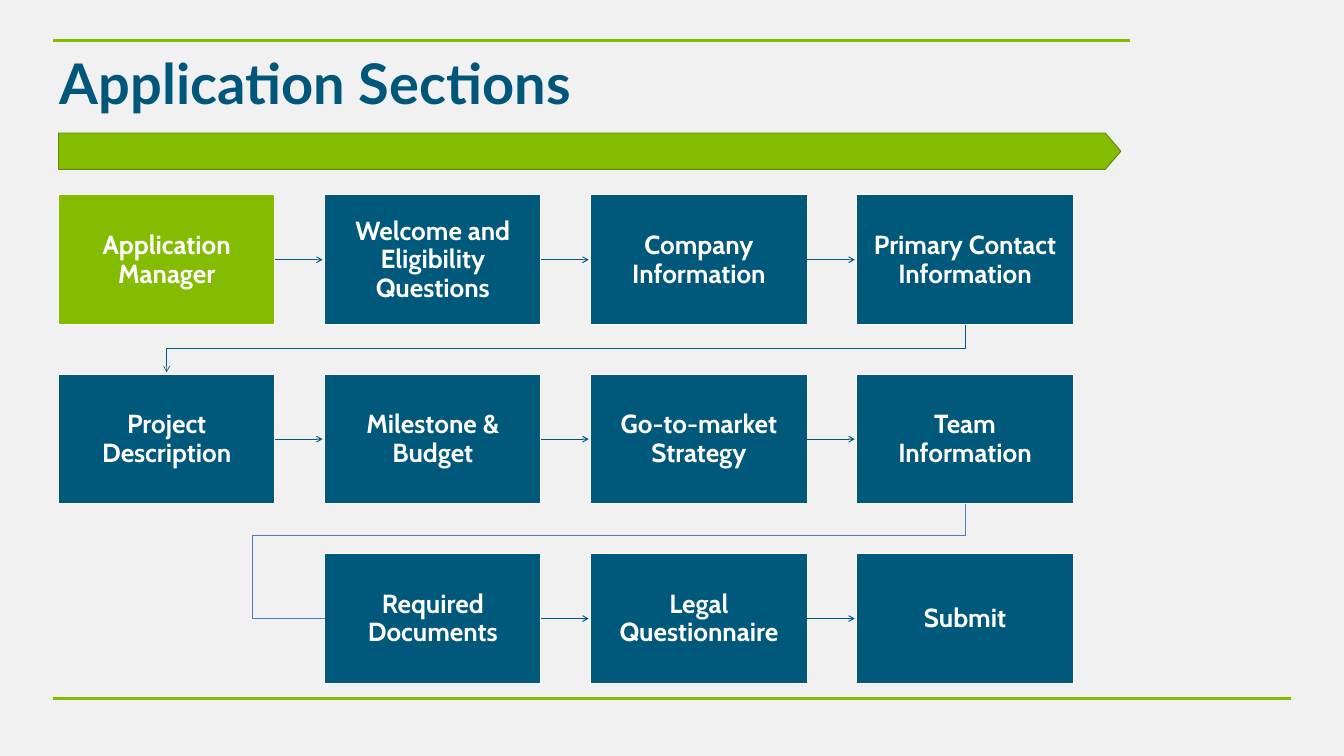
from dataclasses import dataclass

from lxml import etree
from pptx import Presentation
from pptx.dml.color import RGBColor
from pptx.enum.shapes import MSO_CONNECTOR, MSO_SHAPE
from pptx.enum.text import MSO_ANCHOR, PP_ALIGN
from pptx.oxml.ns import qn
from pptx.util import Inches, Pt

STRAIGHT, ELBOW = MSO_CONNECTOR.STRAIGHT, MSO_CONNECTOR.ELBOW
RECT, PENTAGON = MSO_SHAPE.RECTANGLE, MSO_SHAPE.PENTAGON
MIDDLE, TOP = MSO_ANCHOR.MIDDLE, MSO_ANCHOR.TOP
CENTER, LEFT = PP_ALIGN.CENTER, PP_ALIGN.LEFT

Point = tuple[float, float]


@dataclass(frozen=True)
class Theme:
    paper: str = "F1F1F1"
    white: str = "FFFFFF"
    green: str = "83BC00"
    rule: str = "84BC00"
    dark_green: str = "5F8900"
    navy: str = "00587B"
    title: str = "00577A"
    link: str = "4B7EBC"
    title_font: str = "Lato"
    step_font: str = "Cabin"
    title_size: float = 60
    step_size: float = 28
    step_leading: float = 30.7


@dataclass(frozen=True)
class Grid:
    left: float = 0.87
    top: float = 2.9
    col_pitch: float = 3.96
    row_pitch: float = 2.67
    width: float = 3.22
    height: float = 1.93

    def x(self, col: float) -> float:
        return self.left + col * self.col_pitch

    def y(self, row: float) -> float:
        return self.top + row * self.row_pitch

    def mid_x(self, col: int) -> float:
        return self.x(col) + self.width / 2

    def mid_y(self, row: int) -> float:
        return self.y(row) + self.height / 2


@dataclass(frozen=True)
class Step:
    text: str
    col: int
    row: int
    fill: str


THEME, GRID = Theme(), Grid()
SLIDE_W, SLIDE_H = 20, 11.25
ARROW_GAP = 0.03
ROWS = [
    (0, ["Application Manager", "Welcome and Eligibility Questions",
         "Company Information", "Primary Contact Information"]),
    (0, ["Project Description", "Milestone & Budget",
         "Go-to-market Strategy", "Team Information"]),
    (1, ["Required Documents", "Legal Questionnaire", "Submit"]),
]
STEPS = [
    Step(text, first + i, row, THEME.navy if row or i else THEME.green)
    for row, (first, texts) in enumerate(ROWS)
    for i, text in enumerate(texts)
]


def rgb(color: str) -> RGBColor:
    return RGBColor.from_string(color)


def add_box(slide, kind, box, fill: str, line: str):
    sp = slide.shapes.add_shape(kind, *map(Inches, box))
    sp.shadow.inherit = False
    sp.fill.solid()
    sp.fill.fore_color.rgb = rgb(fill)
    sp.line.color.rgb = rgb(line)
    sp.line.width = Pt(1)
    return sp


def add_line(slide, start: Point, end: Point, color: str, width: float,
             kind=STRAIGHT, arrow: bool = False):
    cxn = slide.shapes.add_connector(kind, *map(Inches, (*start, *end)))
    cxn.line.color.rgb = rgb(color)
    cxn.line.width = Pt(width)
    sp_pr = cxn._element.spPr
    if arrow:
        etree.SubElement(sp_pr.find(qn("a:ln")), qn("a:tailEnd"), type="arrow")
    etree.SubElement(sp_pr, qn("a:effectLst"))
    return cxn


def add_bend(slide, start: Point, end: Point, color: str, preset: str,
             arrow: bool = False) -> None:
    """Draw an elbow that leaves its start downwards: a quarter-turned connector."""
    (x1, y1), (x2, y2) = start, end
    cx, cy = (x1 + x2) / 2, (y1 + y2) / 2
    half_w, half_h = (y2 - y1) / 2, (x2 - x1) / 2
    cxn = add_line(slide, (cx - half_w, cy + half_h), (cx + half_w, cy - half_h),
                   color, 0.75, ELBOW, arrow)
    sp_pr = cxn._element.spPr
    sp_pr.find(qn("a:xfrm")).set("rot", "5400000")
    sp_pr.find(qn("a:prstGeom")).set("prst", preset)


def write(sp, text: str, anchor, align, inset: float, font: dict, leading=None) -> None:
    tf = sp.text_frame
    frame = {"word_wrap": True, "vertical_anchor": anchor, "margin_left": Inches(inset),
             "margin_right": Inches(inset), "margin_top": 0, "margin_bottom": 0}
    for name, value in frame.items():
        setattr(tf, name, value)
    p = tf.paragraphs[0]
    p.alignment = align
    p.line_spacing = leading
    r = p.add_run()
    r.text = text
    color = font["color"]
    for name in ("name", "size", "bold"):
        setattr(r.font, name, font[name])
    r.font.color.rgb = rgb(color)


def add_header(slide) -> None:
    for y, right in ((0.6, 16.81), (10.4, 19.21)):
        add_line(slide, (0.79, y), (right, y), THEME.rule, 3)
    banner = add_box(slide, PENTAGON, (GRID.left, 1.98, 15.81, 0.54),
                     THEME.green, THEME.dark_green)
    banner.adjustments[0] = 0.43
    title = slide.shapes.add_textbox(*map(Inches, (GRID.left, 0.72, 18.25, 1.03)))
    write(title, "Application Sections", TOP, LEFT, 0.02,
          {"name": THEME.title_font, "size": Pt(THEME.title_size),
           "bold": True, "color": THEME.title})


def add_step(slide, step: Step) -> None:
    box = (GRID.x(step.col), GRID.y(step.row), GRID.width, GRID.height)
    sp = add_box(slide, RECT, box, step.fill, THEME.white)
    write(sp, step.text, MIDDLE, CENTER, 0.2,
          {"name": THEME.step_font, "size": Pt(THEME.step_size),
           "bold": True, "color": THEME.white}, Pt(THEME.step_leading))


def add_links(slide) -> None:
    for step, following in zip(STEPS, STEPS[1:]):
        if step.row == following.row:
            y = GRID.mid_y(step.row)
            add_line(slide, (GRID.x(step.col) + GRID.width, y),
                     (GRID.x(following.col) - ARROW_GAP, y), THEME.navy, 1, arrow=True)
    last = GRID.mid_x(3)
    add_bend(slide, (last, GRID.y(0) + GRID.height),
             (GRID.mid_x(0), GRID.y(1) - ARROW_GAP), THEME.navy,
             "bentConnector3", arrow=True)
    corner = (3.75, 7.96)
    add_bend(slide, (last, GRID.y(1) + GRID.height), corner, THEME.link, "bentConnector2")
    add_bend(slide, corner, (GRID.x(1), GRID.mid_y(2)), THEME.link, "bentConnector2")


def main() -> None:
    prs = Presentation()
    prs.slide_width, prs.slide_height = Inches(SLIDE_W), Inches(SLIDE_H)
    slide = prs.slides.add_slide(prs.slide_layouts[6])
    slide.background.fill.solid()
    slide.background.fill.fore_color.rgb = rgb(THEME.paper)
    add_header(slide)
    for step in STEPS:
        add_step(slide, step)
    add_links(slide)
    prs.save("out.pptx")


if __name__ == "__main__":
    main()
